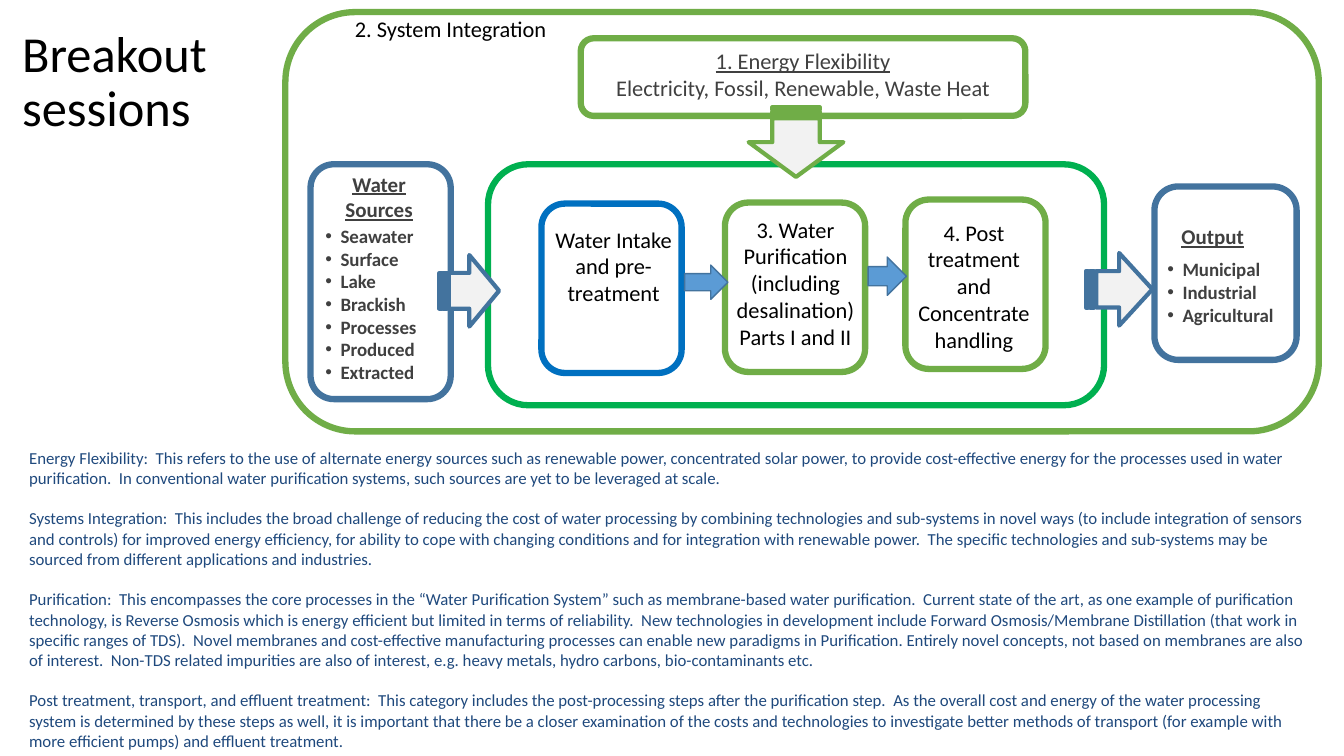
from dataclasses import dataclass

from lxml import etree
from pptx import Presentation
from pptx.dml.color import RGBColor
from pptx.enum.shapes import MSO_SHAPE
from pptx.enum.text import MSO_ANCHOR, MSO_AUTO_SIZE, PP_ALIGN
from pptx.oxml.ns import qn
from pptx.slide import Slide
from pptx.text.text import TextFrame
from pptx.util import Inches, Pt

ROUNDED = MSO_SHAPE.ROUNDED_RECTANGLE
STRIPED_ARROW = MSO_SHAPE.STRIPED_RIGHT_ARROW
ARROW = MSO_SHAPE.RIGHT_ARROW
LEFT, CENTER = PP_ALIGN.LEFT, PP_ALIGN.CENTER

BLACK = RGBColor(0x00, 0x00, 0x00)
CHARCOAL = RGBColor(0x40, 0x40, 0x40)
NAVY = RGBColor(0x1F, 0x49, 0x7D)
STEEL = RGBColor(0x43, 0x73, 0x9E)
BLUE = RGBColor(0x00, 0x70, 0xC0)
SKY = RGBColor(0x5B, 0x9B, 0xD5)
LEAF = RGBColor(0x70, 0xAD, 0x47)
EMERALD = RGBColor(0x00, 0xB0, 0x50)
PALE = RGBColor(0xF2, 0xF2, 0xF2)

FONT = "Calibri"
CELL = Inches(0.1)  # grid of 133.3 columns by 75 rows


@dataclass(frozen=True)
class Area:
    col: float
    row: float
    cols: float
    rows: float

    def lengths(self) -> tuple[int, int, int, int]:
        return tuple(round(n * CELL) for n in (self.col, self.row, self.cols, self.rows))


@dataclass(frozen=True)
class Block:
    kind: int
    area: Area
    line: RGBColor
    weight: float = 4.5
    fill: RGBColor | None = None
    rotation: float = 0


@dataclass(frozen=True)
class Label:
    area: Area
    paragraphs: tuple[str, ...]
    size: float = 16
    color: RGBColor = BLACK
    align: int = CENTER
    bold: bool = False
    underlined: int = 0  # number of leading paragraphs underlined
    bullets: bool = False
    wrap: bool = True
    gap: float = 0


BLOCKS = (
    # Frames and process boxes
    Block(ROUNDED, Area(28.3, 1.2, 102.5, 41.6), LEAF),
    Block(ROUNDED, Area(48.4, 16.3, 61.1, 23.9), EMERALD),
    Block(ROUNDED, Area(30.8, 16.3, 13.9, 23.3), STEEL),
    Block(ROUNDED, Area(57.6, 3.8, 44.1, 7.7), LEAF),
    Block(ROUNDED, Area(114.5, 18.5, 14.1, 17.2), STEEL),
    Block(ROUNDED, Area(53.7, 20.2, 13.9, 16.8), BLUE),
    Block(ROUNDED, Area(71.9, 20.1, 13.9, 16.8), LEAF),
    Block(ROUNDED, Area(89.8, 19.8, 13.9, 16.8), LEAF),
    # Inputs and output of the system
    Block(STRIPED_ARROW, Area(43.6, 25.3, 5.9, 7.1), STEEL, 3, PALE),
    Block(STRIPED_ARROW, Area(75.5, 9.4, 6.9, 9.4), LEAF, 3, PALE, 90),
    Block(STRIPED_ARROW, Area(107.7, 25.1, 6.6, 7.2), STEEL, 3, PALE),
    # Steps between process boxes
    Block(ARROW, Area(67.9, 26.3, 4.3, 3.4), STEEL, 1, SKY),
    Block(ARROW, Area(86.1, 25.5, 3.8, 3.8), STEEL, 1, SKY),
)

DESCRIPTIONS = (
    "Energy Flexibility:  This refers to the use of alternate energy sources such as renewable power, "
    "concentrated solar power, to provide cost-effective energy for the processes used in water "
    "purification.  In conventional water purification systems, such sources are yet to be leveraged "
    "at scale.",
    "Systems Integration:  This includes the broad challenge of reducing the cost of water processing by "
    "combining technologies and sub-systems in novel ways (to include integration of sensors and "
    "controls) for improved energy efficiency, for ability to cope with changing conditions and for "
    "integration with renewable power.  The specific technologies and sub-systems may be sourced from "
    "different applications and industries.",
    "Purification:  This encompasses the core processes in the “Water Purification System” such as "
    "membrane-based water purification.  Current state of the art, as one example of purification "
    "technology, is Reverse Osmosis which is energy efficient but limited in terms of reliability.  New "
    "technologies in development include Forward Osmosis/Membrane Distillation (that work in specific "
    "ranges of TDS).  Novel membranes and cost-effective manufacturing processes can enable new "
    "paradigms in Purification. Entirely novel concepts, not based on membranes are also of interest.  "
    "Non-TDS related impurities are also of interest, e.g. heavy metals, hydro carbons, "
    "bio-contaminants etc.",
    "Post treatment, transport, and effluent treatment:  This category includes the post-processing "
    "steps after the purification step.  As the overall cost and energy of the water processing system "
    "is determined by these steps as well, it is important that there be a closer examination of the "
    "costs and technologies to investigate better methods of transport (for example with more efficient "
    "pumps) and effluent treatment.",
)

LABELS = (
    Label(Area(25.7, 1, 38, 3.7), ("2. System Integration",)),
    Label(Area(57.6, 4.2, 44.1, 6.4),
          ("1. Energy Flexibility", "Electricity, Fossil, Renewable, Waste Heat"),
          color=CHARCOAL, underlined=1),
    Label(Area(33.1, 16.5, 9, 6.1), ("Water", "Sources"), 15, CHARCOAL,
          bold=True, underlined=2, wrap=False),
    Label(Area(30, 21.8, 17, 16.9),
          ("Seawater", "Surface", "Lake", "Brackish", "Processes", "Produced", "Extracted"),
          13.5, CHARCOAL, LEFT, bold=True, bullets=True),
    Label(Area(53.9, 21.9, 13.9, 11.8), ("Water Intake and pre-treatment",)),
    Label(Area(71.9, 20.9, 14, 14.5),
          ("3. Water Purification (including desalination)", "Parts I and II")),
    Label(Area(89.3, 21.2, 14.6, 14.5), ("4. Post treatment and Concentrate handling",)),
    Label(Area(116.2, 21.7, 8.3, 3.5), ("Output",), 15, CHARCOAL, LEFT,
          bold=True, underlined=1, wrap=False),
    Label(Area(113.5, 25.1, 16.8, 7.8), ("Municipal", "Industrial", "Agricultural"),
          13.5, CHARCOAL, LEFT, bold=True, bullets=True),
    Label(Area(1.9, 43.9, 128.9, 31.3), DESCRIPTIONS, 12, NAVY, LEFT, gap=14.6),
)


def write(frame: TextFrame, paragraphs: tuple[str, ...], *, size: float, color: RGBColor = BLACK,
          align: int = LEFT, bold: bool = False, underlined: int = 0, bullets: bool = False,
          wrap: bool = True, gap: float = 0, line_spacing: float = 1) -> None:
    frame.word_wrap = wrap
    for index, text in enumerate(paragraphs):
        paragraph = frame.add_paragraph() if index else frame.paragraphs[0]
        paragraph.alignment = align
        paragraph.line_spacing = line_spacing
        paragraph.space_before = Pt(gap if index else 0)
        run = paragraph.add_run()
        run.text = text
        font = run.font
        font.name, font.size, font.bold = FONT, Pt(size), bold
        font.underline = index < underlined
        font.color.rgb = color
        if bullets:
            properties = paragraph._p.get_or_add_pPr()
            properties.set("marL", str(Inches(0.28)))
            properties.set("indent", str(Inches(-0.15)))
            etree.SubElement(properties, qn("a:buFont"), typeface="Arial")
            etree.SubElement(properties, qn("a:buChar"), char="•")


def draw_block(slide: Slide, block: Block) -> None:
    shape = slide.shapes.add_shape(block.kind, *block.area.lengths())
    shape.shadow.inherit = False
    shape.rotation = block.rotation
    shape.line.color.rgb = block.line
    shape.line.width = Pt(block.weight)
    if block.fill is None:
        shape.fill.background()
    else:
        shape.fill.solid()
        shape.fill.fore_color.rgb = block.fill


def draw_label(slide: Slide, label: Label) -> None:
    box = slide.shapes.add_textbox(*label.area.lengths())
    write(box.text_frame, label.paragraphs, size=label.size, color=label.color, align=label.align,
          bold=label.bold, underlined=label.underlined, bullets=label.bullets, wrap=label.wrap,
          gap=label.gap)


def draw_title(slide: Slide) -> None:
    title = slide.shapes.title
    title.left, title.top, title.width, title.height = Area(1.2, 1, 29.2, 14.5).lengths()
    title.text_frame.auto_size = MSO_AUTO_SIZE.NONE
    title.text_frame.vertical_anchor = MSO_ANCHOR.MIDDLE
    write(title.text_frame, ("Breakout sessions",), size=36, line_spacing=0.9)


def main() -> None:
    deck = Presentation()
    deck.slide_width, deck.slide_height = Inches(13.33), Inches(7.5)
    slide = deck.slides.add_slide(deck.slide_layouts[5])
    draw_title(slide)
    for block in BLOCKS:
        draw_block(slide, block)
    for label in LABELS:
        draw_label(slide, label)
    deck.save("out.pptx")


if __name__ == "__main__":
    main()
